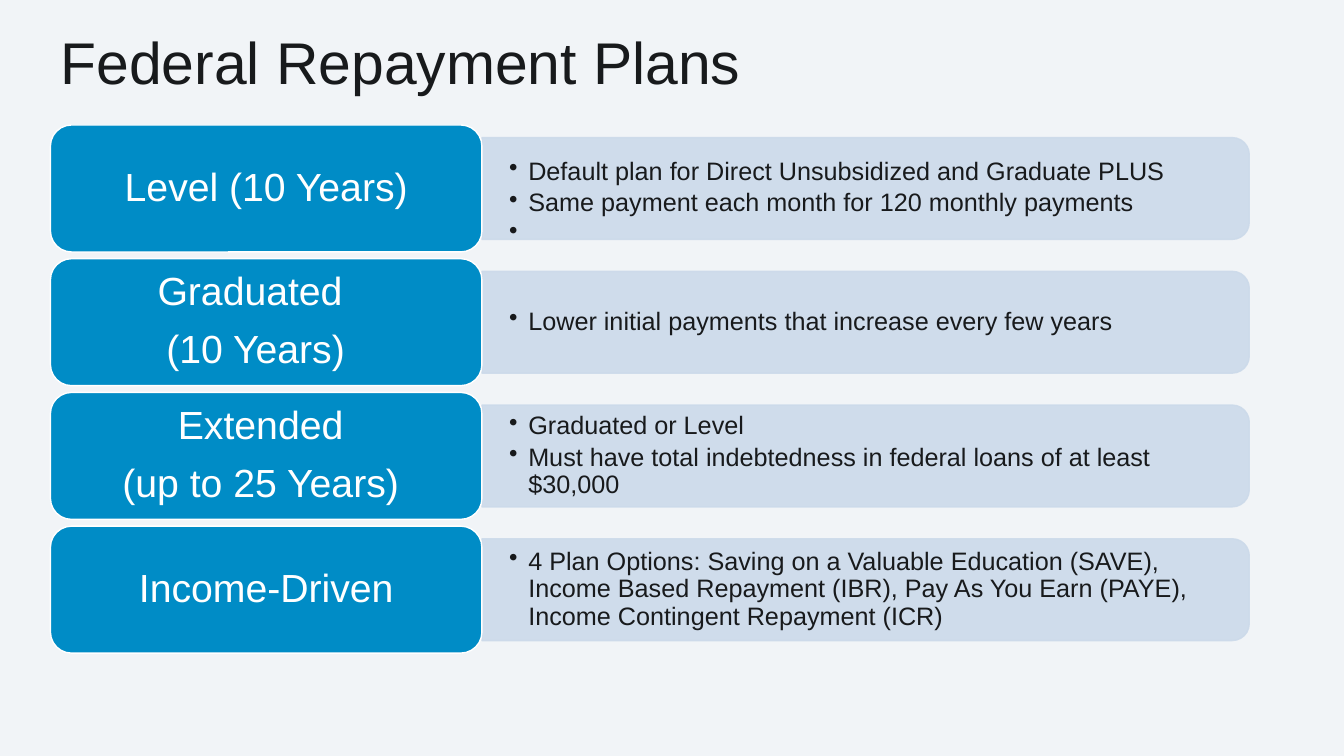
from lxml import etree
from pptx import Presentation
from pptx.dml.color import RGBColor
from pptx.enum import shapes, text
from pptx.oxml.ns import qn
from pptx.util import Inches, Pt

# Content: heading lines with a sideways nudge in inches, bullets, bullet offset
TITLE = "Federal Repayment Plans"
PLANS = [
    ([("Level (10 Years)", 0)],
     ["Default plan for Direct Unsubsidized and Graduate PLUS",
      "Same payment each month for 120 monthly payments",
      " "], 0.15),
    ([("Graduated", -0.32), ("(10 Years)", 0.11)],
     ["Lower initial payments that increase every few years"], 0),
    ([("Extended", -0.11), ("(up to 25 Years)", 0)],
     ["Graduated or Level",
      "Must have total indebtedness in federal loans of at least $30,000"], 0),
    ([("Income-Driven", 0)],
     ["4 Plan Options: Saving on a Valuable Education (SAVE), Income Based "
      "Repayment (IBR), Pay As You Earn (PAYE), Income Contingent Repayment "
      "(ICR)"], 0),
]
COLORS = {"background": "F1F4F7", "ink": "181A1C", "card": "008CC6",
          "panel": "CCDAEA", "white": "FFFFFF"}
FONT = "Arial"

# Layout, in inches
LEFT, TOP, LAST_TOP = 0.5, 1.24, 5.22
CARD_W, CARD_H = 4.28, 1.26
PANEL_W, PANEL_H = 7.61, 1.01
BULLETS_W, BULLETS_H = 7.56, 0.91
HANG = 0.19
PITCH = (LAST_TOP - TOP) / (len(PLANS) - 1)
PANEL_LEFT = LEFT + CARD_W


def color(name):
    return RGBColor.from_string(COLORS[name])


def paint(shape, fill, line, alpha=None):
    shape.shadow.inherit = False
    shape.fill.solid()
    shape.fill.fore_color.rgb = color(fill)
    shape.line.color.rgb = color(line)
    shape.line.width = Pt(1)
    if alpha:
        for srgb in shape._element.spPr.iter(qn("a:srgbClr")):
            etree.SubElement(srgb, qn("a:alpha")).set("val", str(alpha * 1000))


def set_lines(shape, lines, side_inset, size, ink, space_after):
    frame = shape.text_frame
    frame.word_wrap = True
    frame.vertical_anchor = text.MSO_ANCHOR.MIDDLE
    frame.margin_left = frame.margin_right = Inches(side_inset)
    frame.margin_top = frame.margin_bottom = 0
    frame.text = "\n".join(lines)
    for paragraph in frame.paragraphs:
        paragraph.line_spacing = 0.9
        paragraph.space_after = Pt(space_after)
        for run in paragraph.runs:
            run.font.name, run.font.size = FONT, Pt(size)
            run.font.color.rgb = color(ink)
    return frame.paragraphs


def add_panel(slide, middle):
    panel = slide.shapes.add_shape(
        shapes.MSO_SHAPE.ROUND_2_SAME_RECTANGLE,
        Inches(PANEL_LEFT + (PANEL_W - PANEL_H) / 2),
        Inches(middle - PANEL_W / 2), Inches(PANEL_H), Inches(PANEL_W))
    panel.rotation = 90
    paint(panel, "panel", "panel", alpha=90)


def add_bullets(slide, middle, bullets):
    box = slide.shapes.add_textbox(
        Inches(PANEL_LEFT), Inches(middle - BULLETS_H / 2),
        Inches(BULLETS_W), Inches(BULLETS_H))
    for paragraph in set_lines(box, bullets, 0.27, 18, "ink", 3.1):
        props = paragraph._p.get_or_add_pPr()
        props.set("marL", str(Inches(HANG)))
        props.set("indent", str(-Inches(HANG)))
        etree.SubElement(props, qn("a:buChar")).set("char", "•")


def add_card(slide, top, heading):
    card = slide.shapes.add_shape(
        shapes.MSO_SHAPE.ROUNDED_RECTANGLE, Inches(LEFT), Inches(top),
        Inches(CARD_W), Inches(CARD_H))
    paint(card, "card", "white")
    lines = [line for line, _ in heading]
    paragraphs = set_lines(card, lines, 0.18, 28, "white", 11.3)
    for paragraph, (_, nudge) in zip(paragraphs, heading):
        paragraph.alignment = text.PP_ALIGN.CENTER
        if nudge:
            margin = "marL" if nudge > 0 else "marR"
            paragraph._p.get_or_add_pPr().set(margin, str(Inches(abs(nudge))))


def main():
    deck = Presentation()
    deck.slide_width, deck.slide_height = Inches(13.33), Inches(7.5)
    slide = deck.slides.add_slide(deck.slide_layouts[5])
    slide.background.fill.solid()
    slide.background.fill.fore_color.rgb = color("background")

    # Title
    title = slide.shapes.title
    title.left, title.top = Inches(LEFT), Inches(0.3)
    title.width, title.height = Inches(9), Inches(0.61)
    title.text_frame.text = TITLE
    title.text_frame.auto_size = text.MSO_AUTO_SIZE.NONE
    title.text_frame.vertical_anchor = text.MSO_ANCHOR.MIDDLE
    heading = title.text_frame.paragraphs[0]
    heading.alignment = text.PP_ALIGN.LEFT
    heading.font.name, heading.font.size = FONT, Pt(42)
    heading.font.color.rgb = color("ink")

    # One row per plan
    for row, (plan, bullets, offset) in enumerate(PLANS):
        top = TOP + row * PITCH
        middle = top + CARD_H / 2
        add_panel(slide, middle)
        add_bullets(slide, middle + offset, bullets)
        add_card(slide, top, plan)

    deck.save("out.pptx")


if __name__ == "__main__":
    main()
